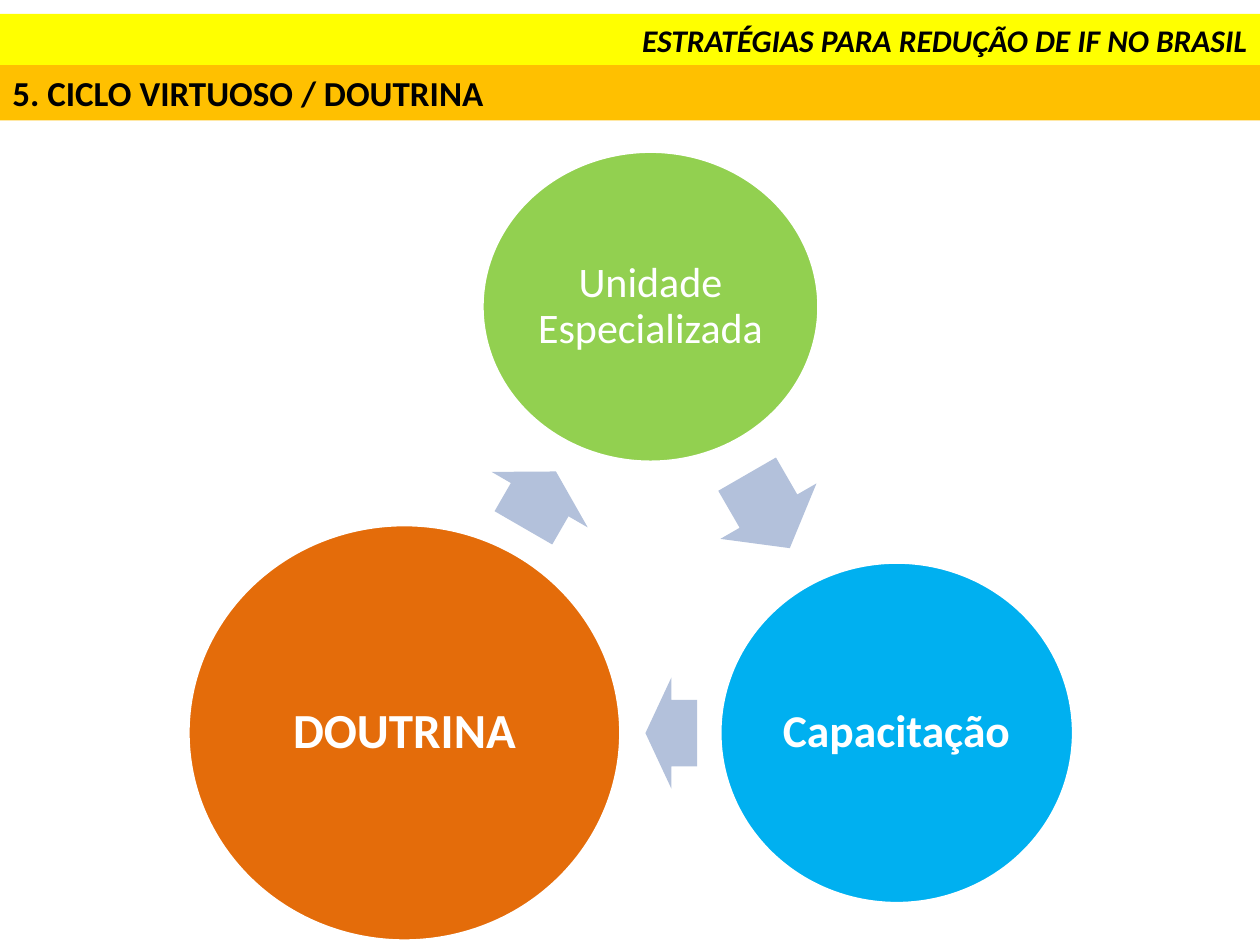
from pptx import Presentation
from pptx.dml.color import RGBColor
from pptx.enum import shapes, text
from pptx.util import Pt

COLORS = {
    "yellow": "FFFF00",
    "amber": "FFC000",
    "green": "92D050",
    "blue": "00B0F0",
    "orange": "E46C0A",
    "arrow": "B3C1DB",
    "white": "FFFFFF",
    "black": "000000",
}
SLIDE_WIDTH, SLIDE_HEIGHT = 720, 540
ARROW_HEIGHT = 63.4

# label, fill, left, top, width, height, font size, bold
CIRCLES = [
    ("Unidade Especializada", "green", 275.4, 86.4, 192.6, 177.8, 24, False),
    ("Capacitação", "blue", 411.3, 321.2, 202.2, 195.2, 26, True),
    ("DOUTRINA", "orange", 107.4, 299.8, 247.4, 238, 28, True),
]
# left, top, length, rotation
ARROWS = [
    (414.7, 260.4, 48.8, 60),
    (368.8, 387.2, 29.6, 180),
    (289.8, 253.8, 37.2, 300),
]


def rgb(name):
    return RGBColor.from_string(COLORS[name])


def place(shape, left, top, width, height):
    shape.left, shape.top = Pt(left), Pt(top)
    shape.width, shape.height = Pt(width), Pt(height)


def paint(shape, color):
    shape.fill.solid()
    shape.fill.fore_color.rgb = rgb(color)


def add_shape(slide, kind, color, left, top, width, height):
    """Add a flat preset shape without outline or shadow."""
    shape = slide.shapes.add_shape(kind, Pt(left), Pt(top), Pt(width), Pt(height))
    shape.shadow.inherit = False
    shape.line.fill.background()
    paint(shape, color)
    return shape


def write(shape, words, size, color, alignment, bold=True, italic=False):
    frame = shape.text_frame
    frame.word_wrap = True
    frame.auto_size = text.MSO_AUTO_SIZE.NONE
    frame.vertical_anchor = text.MSO_ANCHOR.MIDDLE
    frame.text = words
    paragraph = frame.paragraphs[0]
    paragraph.alignment = alignment
    font = paragraph.font
    font.name, font.size = "Calibri", Pt(size)
    font.bold, font.italic = bold, italic
    font.color.rgb = rgb(color)
    return paragraph


def add_title(slide, words):
    title = slide.shapes.title
    place(title, 0, 8, SLIDE_WIDTH, 29.2)
    paint(title, "yellow")
    write(title, words, 18, "black", text.PP_ALIGN.RIGHT, italic=True)


def add_section_band(slide, words):
    band = add_shape(slide, shapes.MSO_SHAPE.RECTANGLE, "amber",
                     0, 37.2, SLIDE_WIDTH, 31.6)
    write(band, words, 20, "black", text.PP_ALIGN.JUSTIFY)


def add_circle(slide, label, color, left, top, width, height, size, bold):
    circle = add_shape(slide, shapes.MSO_SHAPE.OVAL, color, left, top, width, height)
    circle.line.color.rgb = rgb("white")
    circle.line.width = Pt(2)
    frame = circle.text_frame
    frame.margin_left = frame.margin_right = Pt(2.5)
    frame.margin_top = frame.margin_bottom = Pt(2.5)
    paragraph = write(circle, label, size, "white", text.PP_ALIGN.CENTER, bold)
    paragraph.line_spacing = 0.9


def add_arrow(slide, left, top, length, rotation):
    arrow = add_shape(slide, shapes.MSO_SHAPE.RIGHT_ARROW, "arrow",
                      left, top, length, ARROW_HEIGHT)
    arrow.adjustments[0], arrow.adjustments[1] = 0.6, 0.5
    arrow.rotation = rotation


def main():
    presentation = Presentation()
    presentation.slide_width = Pt(SLIDE_WIDTH)
    presentation.slide_height = Pt(SLIDE_HEIGHT)
    title_only = presentation.slide_layouts[5]
    slide = presentation.slides.add_slide(title_only)

    add_title(slide, "ESTRATÉGIAS PARA REDUÇÃO DE IF NO BRASIL")
    add_section_band(slide, "5. CICLO VIRTUOSO / DOUTRINA")
    for circle, arrow in zip(CIRCLES, ARROWS):
        add_circle(slide, *circle)
        add_arrow(slide, *arrow)

    presentation.save("out.pptx")


if __name__ == "__main__":
    main()
